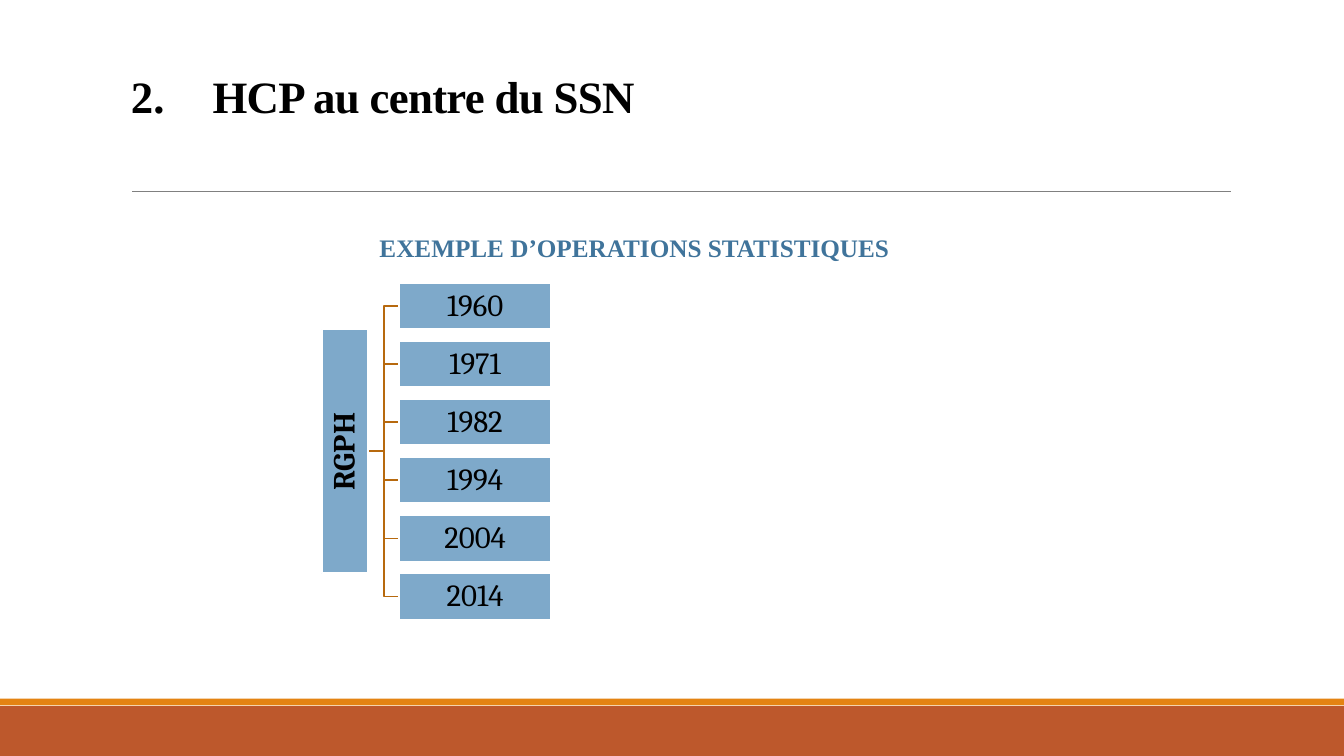
from dataclasses import dataclass

from lxml import etree
from pptx import Presentation
from pptx import util as u
from pptx.dml import color
from pptx.enum import shapes, text
from pptx.oxml import ns


@dataclass(frozen=True)
class Theme:
    band: str = "BD582C"
    stripe: str = "E48312"
    rule: str = "808080"
    box: str = "7EA9CA"
    link: str = "B7690E"
    paper: str = "FFFFFF"
    ink: str = "000000"
    accent: str = "40749B"
    heading_font: str = "Times New Roman"
    box_font: str = "Cambria"
    title_size: int = 32
    subtitle_size: int = 18
    box_size: int = 22
    thin: float = 0.5
    medium: float = 1.25


class Deck:
    def __init__(self, theme):
        self.theme = theme
        self.prs = Presentation()
        self.prs.slide_width = u.Inches(13.33)
        self.prs.slide_height = u.Inches(7.5)
        self.s = self.prs.slides.add_slide(self.prs.slide_layouts[6])

    def x(self, percent):
        return round(self.prs.slide_width * percent / 100)

    def y(self, percent):
        return round(self.prs.slide_height * percent / 100)

    def place(self, left, top, width, height):
        return self.x(left), self.y(top), self.x(width), self.y(height)

    def stroke(self, line, rgb, width):
        line.color.rgb = color.RGBColor.from_string(rgb)
        line.width = u.Pt(width)

    def set_text(self, tf, words, font, size, rgb, bold):
        tf.word_wrap = True
        p = tf.paragraphs[0]
        p.text = words
        p.font.name, p.font.size, p.font.bold = font, u.Pt(size), bold
        p.font.color.rgb = color.RGBColor.from_string(rgb)
        return p

    def rect(self, left, top, width, height, fill):
        sp = self.s.shapes.add_shape(
            shapes.MSO_SHAPE.RECTANGLE, *self.place(left, top, width, height))
        sp.shadow.inherit = False
        sp.fill.solid()
        sp.fill.fore_color.rgb = color.RGBColor.from_string(fill)
        sp.line.fill.background()
        return sp

    def box(self, cx, cy, width, height, words, bold=False, rotation=0):
        t = self.theme
        sp = self.rect(cx - width / 2, cy - height / 2, width, height, t.box)
        sp.rotation = rotation
        self.stroke(sp.line, t.paper, t.medium)
        tf = sp.text_frame
        tf.margin_left = tf.margin_right = u.Inches(0.02)
        tf.margin_top = tf.margin_bottom = u.Inches(0.02)
        tf.vertical_anchor = text.MSO_ANCHOR.MIDDLE
        p = self.set_text(tf, words, t.box_font, t.box_size, t.ink, bold)
        p.alignment = text.PP_ALIGN.CENTER
        p.line_spacing = 0.9

    def rule(self, left, right, top):
        y = self.y(top)
        line = self.s.shapes.add_connector(
            shapes.MSO_CONNECTOR.STRAIGHT, self.x(left), y, self.x(right), y)
        self.stroke(line.line, self.theme.rule, self.theme.thin)
        etree.SubElement(line._element.spPr, ns.qn("a:effectLst"))

    def branch(self, left, right, start, end):
        middle = (left + right) / 2
        outline = self.s.shapes.build_freeform(self.x(left), self.y(start))
        outline.add_line_segments(
            [(self.x(a), self.y(b)) for a, b in
             ((middle, start), (middle, end), (right, end))], close=False)
        sp = outline.convert_to_shape()
        sp.shadow.inherit = False
        sp.fill.background()
        self.stroke(sp.line, self.theme.link, self.theme.medium)

    def heading(self, left, top, width, height, words, size, rgb):
        tf = self.s.shapes.add_textbox(
            *self.place(left, top, width, height)).text_frame
        p = self.set_text(tf, words, self.theme.heading_font, size, rgb, True)
        return p, tf

    def title(self, left, top, width, height, words, number):
        t = self.theme
        p, tf = self.heading(left, top, width, height, words, t.title_size, t.ink)
        tf.vertical_anchor = text.MSO_ANCHOR.BOTTOM
        p.alignment = text.PP_ALIGN.JUSTIFY
        p.line_spacing = 0.85
        p.runs[0]._r.get_or_add_rPr().set("spc", "-50")
        pPr = p._p.get_or_add_pPr()
        indent = u.Inches(0.81)
        pPr.set("marL", str(indent))
        pPr.set("indent", str(-indent))
        bullet = etree.Element(
            ns.qn("a:buAutoNum"), type="arabicPeriod", startAt=str(number))
        pPr.find(ns.qn("a:lnSpc")).addnext(bullet)


def main():
    theme = Theme()
    deck = Deck(theme)
    deck.rect(0, 93.4, 100, 6.6, theme.band)
    deck.rect(0, 92.4, 100, 0.9, theme.stripe)
    deck.rule(9.83, 91.58, 25.3)
    deck.title(9, 4.1, 82.5, 12.8, "HCP au centre du SSN", 2)
    deck.heading(27.5, 30.1, 42.4, 5.3, "EXEMPLE D’OPERATIONS STATISTIQUES",
                 theme.subtitle_size, theme.accent)

    years = ("1960", "1971", "1982", "1994", "2004", "2014")
    middle, pitch, thickness = 59.7, 7.68, 6.1
    root_right, year_left, year_width = 27.4, 29.7, 11.3
    centres = [middle + (i - (len(years) - 1) / 2) * pitch
               for i in range(len(years))]
    for centre in centres:
        deck.branch(root_right, year_left, middle, centre)
    deck.box(25.65, middle, 18.15, thickness, "RGPH", bold=True, rotation=270)
    for year, centre in zip(years, centres):
        deck.box(year_left + year_width / 2, centre, year_width, thickness, year)
    deck.prs.save("out.pptx")


if __name__ == "__main__":
    main()
